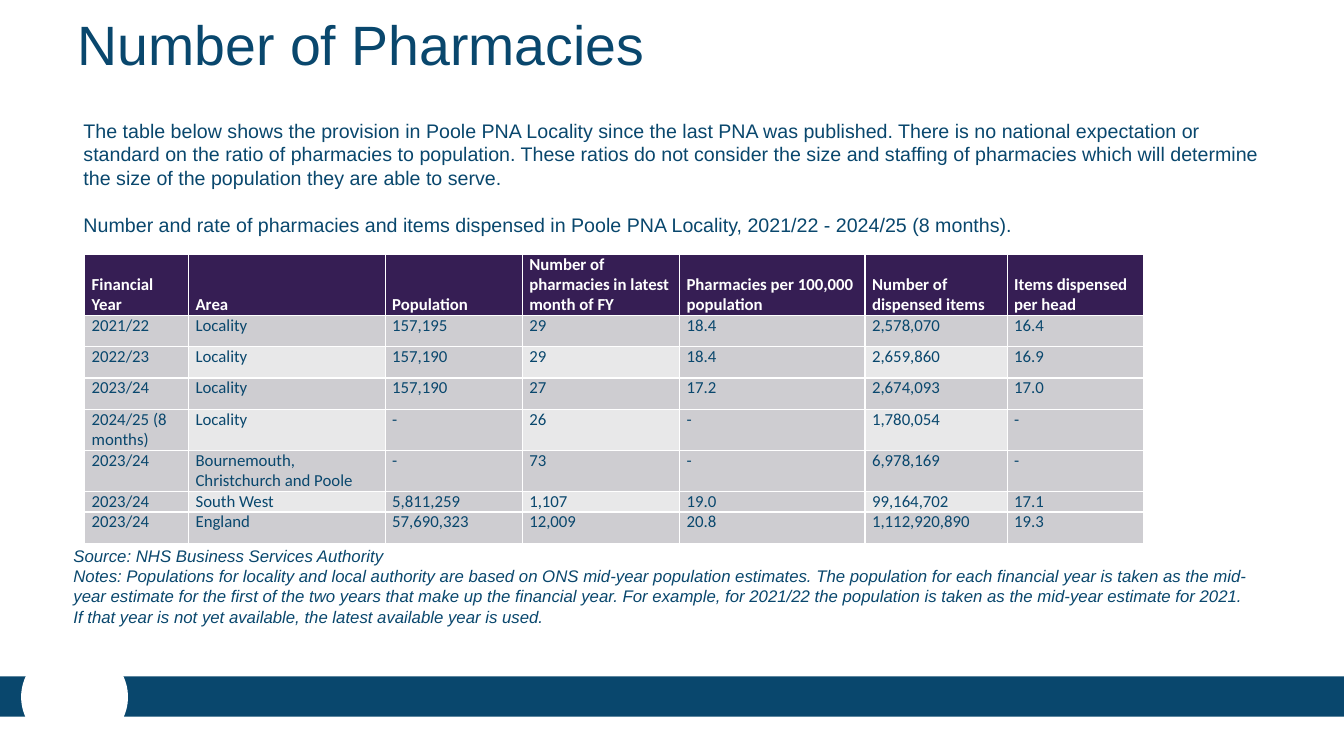
from pptx import Presentation
from pptx.dml.color import RGBColor
from pptx.enum.shapes import MSO_SHAPE
from pptx.enum.text import MSO_ANCHOR
from pptx.util import Inches, Pt

COLORS = {
    "navy": "09476D",
    "purple": "361E54",
    "white": "FFFFFF",
    "grey": "CECDD1",
    "light": "E8E8E9",
}


def write(frame, *texts, size=12, font="Arial", color="navy", bold=False,
          italic=False, gap=0, line_spacing=None):
    frame.word_wrap = True
    for index, text in enumerate(texts):
        para = frame.add_paragraph() if index else frame.paragraphs[0]
        if index and gap:
            para.space_before = Pt(gap)
        if line_spacing:
            para.line_spacing = line_spacing
        span = para.add_run()
        span.text = text
        span.font.size = Pt(size)
        span.font.name = font
        span.font.bold = bold
        span.font.italic = italic
        span.font.color.rgb = RGBColor.from_string(COLORS[color])


def add_text(left, top, width, height, *texts, **style):
    box = page.shapes.add_textbox(Inches(left), Inches(top), Inches(width), Inches(height))
    box.text_frame.vertical_anchor = MSO_ANCHOR.MIDDLE
    write(box.text_frame, *texts, **style)


deck = Presentation()
deck.slide_width = Inches(13.33)
deck.slide_height = Inches(7.5)
page = deck.slides.add_slide(deck.slide_layouts[6])

# Footer band with its white circle
for kind, left, top, width, height, color in [
    (MSO_SHAPE.RECTANGLE, 0, 6.71, 13.33, 0.4, "navy"),
    (MSO_SHAPE.OVAL, 0.21, 6.41, 1.06, 1.01, "white"),
]:
    shape = page.shapes.add_shape(kind, Inches(left), Inches(top), Inches(width), Inches(height))
    shape.shadow.inherit = False
    shape.fill.solid()
    shape.fill.fore_color.rgb = RGBColor.from_string(COLORS[color])
    shape.line.fill.background()

# Title, introduction and source notes
add_text(0.67, 0.12, 8.5, 0.71, "Number of Pharmacies", size=39.6, line_spacing=0.9)
add_text(
    0.73, 1.12, 11.87, 1.28,
    "The table below shows the provision in Poole PNA Locality since the last PNA was published. "
    "There is no national expectation or standard on the ratio of pharmacies to population. "
    "These ratios do not consider the size and staffing of pharmacies which will determine "
    "the size of the population they are able to serve.",
    "Number and rate of pharmacies and items dispensed in Poole PNA Locality, "
    "2021/22 - 2024/25 (8 months).",
    size=14, gap=17,
)
add_text(
    0.63, 5.36, 11.87, 0.91,
    "Source: NHS Business Services Authority",
    "Notes: Populations for locality and local authority are based on ONS mid-year population "
    "estimates. The population for each financial year is taken as the mid-year estimate for the "
    "first of the two years that make up the financial year. For example, for 2021/22 the "
    "population is taken as the mid-year estimate for 2021. If that year is not yet available, "
    "the latest available year is used.",
    italic=True,
)

# Pharmacy table
rows = [
    ("Financial Year", "Area", "Population", "Number of pharmacies in latest month of FY",
     "Pharmacies per 100,000 population", "Number of dispensed items",
     "Items dispensed per head"),
    ("2021/22", "Locality", "157,195", "29", "18.4", "2,578,070", "16.4"),
    ("2022/23", "Locality", "157,190", "29", "18.4", "2,659,860", "16.9"),
    ("2023/24", "Locality", "157,190", "27", "17.2", "2,674,093", "17.0"),
    ("2024/25 (8 months)", "Locality", "-", "26", "-", "1,780,054", "-"),
    ("2023/24", "Bournemouth, Christchurch and Poole", "-", "73", "-", "6,978,169", "-"),
    ("2023/24", "South West", "5,811,259", "1,107", "19.0", "99,164,702", "17.1"),
    ("2023/24", "England", "57,690,323", "12,009", "20.8", "1,112,920,890", "19.3"),
]
column_widths = [1.03, 1.95, 1.36, 1.56, 1.84, 1.41, 1.35]
row_heights = [0.61, 0.31, 0.31, 0.31, 0.41, 0.41, 0.2, 0.31]

table = page.shapes.add_table(
    len(rows), len(column_widths), Inches(0.84), Inches(2.52),
    Inches(sum(column_widths)), Inches(sum(row_heights)),
).table
for column, width in zip(table.columns, column_widths):
    column.width = Inches(width)

for row_index, (values, height) in enumerate(zip(rows, row_heights)):
    table.rows[row_index].height = Inches(height)
    header = row_index == 0
    for column_index, value in enumerate(values):
        cell = table.cell(row_index, column_index)
        cell.margin_left = cell.margin_right = Inches(0.07)
        cell.margin_top = cell.margin_bottom = 0
        cell.vertical_anchor = MSO_ANCHOR.BOTTOM if header else MSO_ANCHOR.TOP
        # Even rows are lighter in every second column
        lighter = row_index % 2 == 0 and column_index % 2 == 1
        fill = "purple" if header else "light" if lighter else "grey"
        cell.fill.solid()
        cell.fill.fore_color.rgb = RGBColor.from_string(COLORS[fill])
        write(cell.text_frame, value, font="Calibri", bold=header,
              color="white" if header else "navy")

deck.save("out.pptx")
